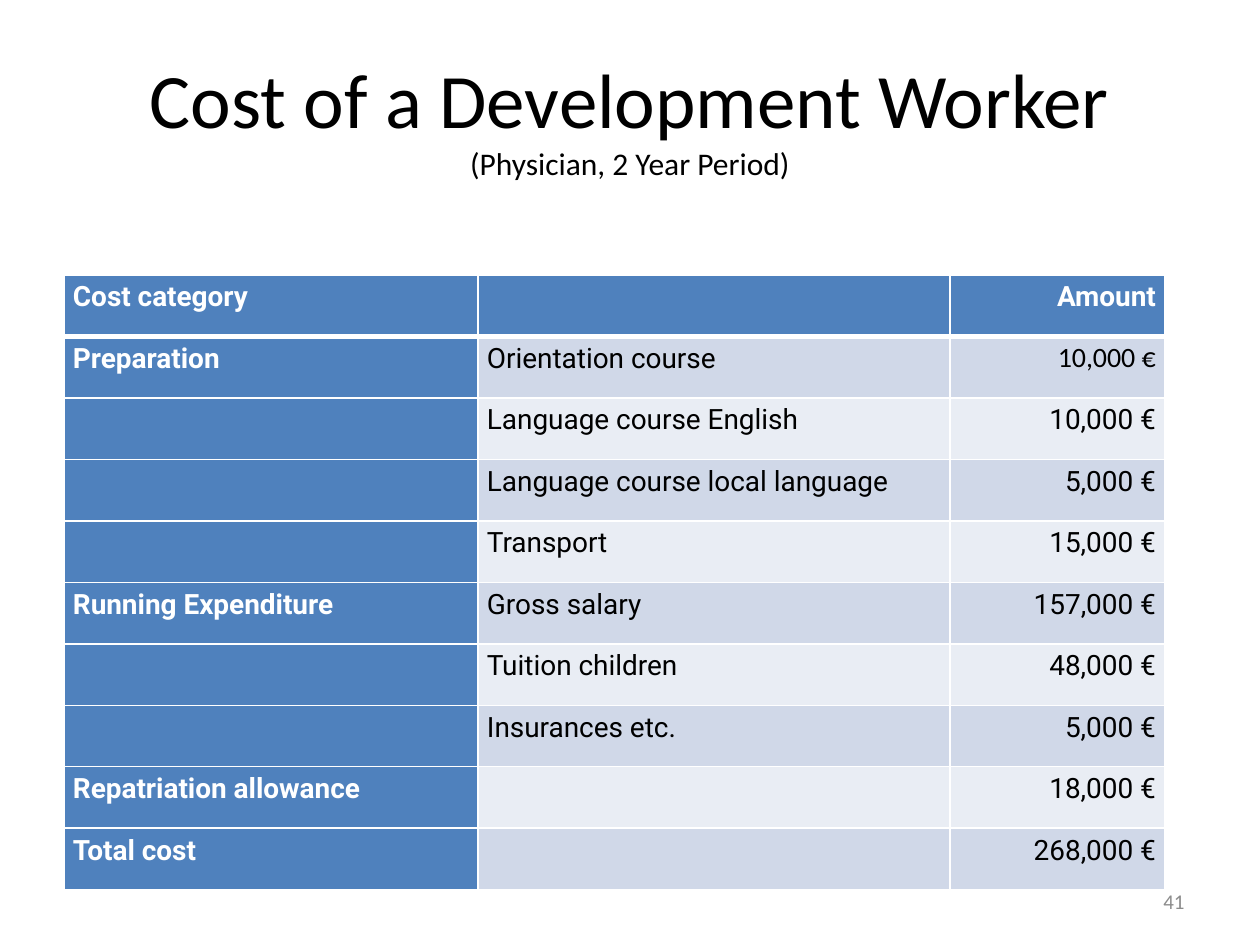
from lxml import etree
from pptx import Presentation
from pptx import util as u
from pptx.dml.color import RGBColor
from pptx.enum import text
from pptx.oxml import ns

PX_PER_INCH = 126
WHITE = RGBColor(0xFF, 0xFF, 0xFF)
BLACK = RGBColor(0x00, 0x00, 0x00)
GRAY = RGBColor(0x8C, 0x8C, 0x8C)
BLUE = RGBColor(0x4F, 0x81, 0xBD)
BANDS = (RGBColor(0xE9, 0xED, 0xF4), RGBColor(0xD0, 0xD8, 0xE8))
LEFT, CENTER = text.PP_ALIGN.JUSTIFY, text.PP_ALIGN.CENTER
RIGHT = text.PP_ALIGN.RIGHT

COLUMN_WIDTHS = (414, 472, 215)
ROWS = (
    ("Cost category", "", "Amount"),
    ("Preparation", "Orientation course", "10,000 €"),
    ("", "Language course English", "10,000 €"),
    ("", "Language course local language", "5,000 €"),
    ("", "Transport", "15,000 €"),
    ("Running Expenditure", "Gross salary", "157,000 €"),
    ("", "Tuition children", "48,000 €"),
    ("", "Insurances etc.", "5,000 €"),
    ("Repatriation allowance", "", "18,000 €"),
    ("Total cost", "", "268,000 €"),
)


def px(length):
    return u.Emu(round(length * u.Inches(1) / PX_PER_INCH))


def add_span(para, words, size, color, font="Calibri", bold=False):
    span = para.add_run()
    span.text = words
    span.font.size = u.Pt(size)
    span.font.name = font
    span.font.bold = bold
    span.font.color.rgb = color


def add_box(page, left, top, width, height, align):
    """Add a middle-anchored text box and return its first paragraph."""
    box = page.shapes.add_textbox(px(left), px(top), px(width), px(height))
    frame = box.text_frame
    frame.word_wrap = True
    frame.vertical_anchor = text.MSO_ANCHOR.MIDDLE
    para = frame.paragraphs[0]
    para.alignment = align
    return para


def set_borders(cell, bottom):
    """Draw white cell borders, 1 pt wide except for the bottom one."""
    properties = cell._tc.get_or_add_tcPr()
    for side, width in (("L", 1), ("R", 1), ("T", 1), ("B", bottom)):
        line = etree.SubElement(properties, ns.qn(f"a:ln{side}"), w=str(u.Pt(width)))
        fill = etree.SubElement(line, ns.qn("a:solidFill"))
        etree.SubElement(fill, ns.qn("a:srgbClr"), val=str(WHITE))


def fill_cell(cell, words, row, column):
    heading = row == 0 or column == 0
    set_borders(cell, 3 if row == 0 else 1)
    cell.fill.solid()
    cell.fill.fore_color.rgb = BLUE if heading else BANDS[row % 2]
    if not words:
        return
    cell.vertical_anchor = text.MSO_ANCHOR.MIDDLE
    cell.margin_left = cell.margin_right = px(9)
    cell.margin_top = cell.margin_bottom = 0
    para = cell.text_frame.paragraphs[0]
    para.alignment = RIGHT if column == 2 else LEFT
    para.line_spacing = u.Pt(9)
    para.space_before = para.space_after = u.Pt(1)
    font = "Calibri" if (row, column) == (1, 2) else "Roboto"
    add_span(para, words, 16, WHITE if heading else BLACK, font, heading)


def add_cost_table(page):
    frame = page.shapes.add_table(len(ROWS), len(COLUMN_WIDTHS),
                                  px(64), px(275), px(sum(COLUMN_WIDTHS)), px(615))
    table = frame.table
    for column, width in zip(table.columns, COLUMN_WIDTHS):
        column.width = px(width)
    for row, entries in enumerate(ROWS):
        for column, words in enumerate(entries):
            fill_cell(table.cell(row, column), words, row, column)


def main():
    deck = Presentation()
    deck.slide_width, deck.slide_height = px(1260), px(945)
    page = deck.slides.add_slide(deck.slide_layouts[6])

    title = add_box(page, 63, 38, 1134, 158, CENTER)
    add_span(title, "Cost of a Development Worker", 44, BLACK)
    title.add_line_break()
    add_span(title, "(Physician, 2 Year Period)", 18, BLACK)

    add_cost_table(page)
    add_span(add_box(page, 903, 876, 294, 50, RIGHT), "41", 12, GRAY)
    deck.save("out.pptx")


if __name__ == "__main__":
    main()
